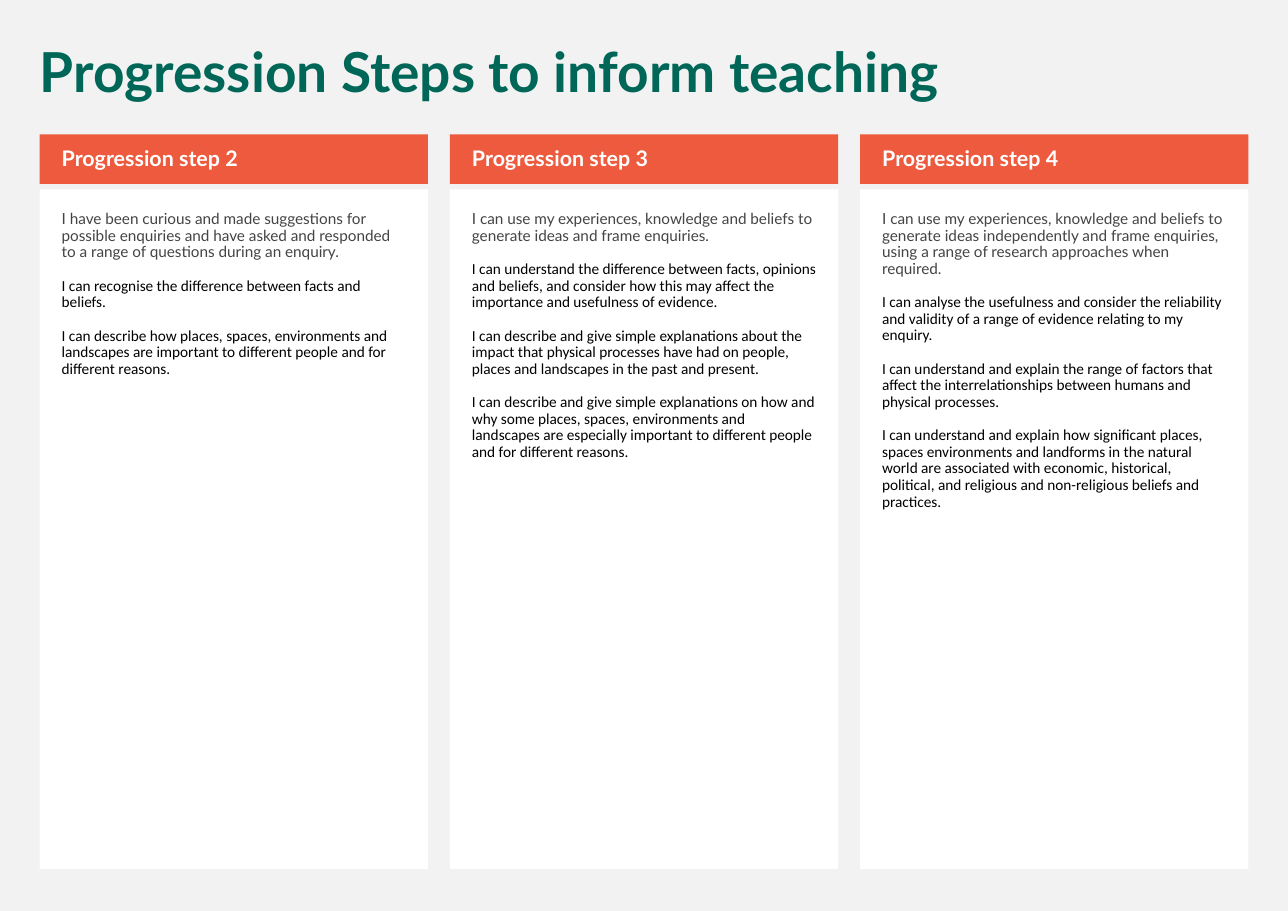
from pptx import Presentation
from pptx import util as u
from pptx.dml.color import RGBColor
from pptx.enum import shapes, text

GREY_BACKGROUND = RGBColor(0xF2, 0xF2, 0xF2)
GREEN = RGBColor(0x00, 0x67, 0x58)
ORANGE = RGBColor(0xED, 0x5A, 0x3E)
WHITE = RGBColor(0xFF, 0xFF, 0xFF)
DARK_GREY = RGBColor(0x44, 0x44, 0x44)
BLACK = RGBColor(0x00, 0x00, 0x00)

# Grid, in inches
SLIDE_WIDTH, SLIDE_HEIGHT = 11.69, 8.27
MARGIN = 0.36
GUTTER = 0.2
COLUMN_WIDTH = (SLIDE_WIDTH - 2 * MARGIN - 2 * GUTTER) / 3
HEADER_TOP, HEADER_HEIGHT = 1.22, 0.45
BODY_TOP = 1.72
BODY_HEIGHT = 6.17

TITLE_FONT = dict(name="Lato", size=u.Pt(36), bold=True)
HEADER_FONT = dict(name="Lato", size=u.Pt(14), bold=True)
LEAD_FONT = dict(name="Lato", size=u.Pt(10), bold=False)
BODY_FONT = dict(name="Calibri", size=u.Pt(10), bold=False)

STEPS = {
    "Progression step 2": [
        "I have been curious and made suggestions for possible enquiries and have asked "
        "and responded to a range of questions during an enquiry.",
        "I can recognise the difference between facts and beliefs.",
        "I can describe how places, spaces, environments and landscapes are important to "
        "different people and for different reasons.",
    ],
    "Progression step 3": [
        "I can use my experiences, knowledge and beliefs to generate ideas and frame "
        "enquiries.",
        "I can understand the difference between facts, opinions and beliefs, and consider "
        "how this may affect the importance and usefulness of evidence.",
        "I can describe and give simple explanations about the impact that physical "
        "processes have had on people, places and landscapes in the past and present.",
        "I can describe and give simple explanations on how and why some places, spaces, "
        "environments and landscapes are especially important to different people and for "
        "different reasons.",
    ],
    "Progression step 4": [
        "I can use my experiences, knowledge and beliefs to generate ideas independently "
        "and frame enquiries, using a range of research approaches when required.",
        "I can analyse the usefulness and consider the reliability and validity of a range "
        "of evidence relating to my enquiry.",
        "I can understand and explain the range of factors that affect the "
        "interrelationships between humans and physical processes.",
        "I can understand and explain how significant places, spaces environments and "
        "landforms in the natural world are associated with economic, historical, "
        "political, and religious and non-religious beliefs and practices.",
    ],
}


def write(shape, lines, insets, anchor):
    """Fill a shape with (wording, font values, colour) paragraphs."""
    frame = shape.text_frame
    frame.word_wrap = True
    frame.auto_size = text.MSO_AUTO_SIZE.NONE
    frame.vertical_anchor = anchor
    for side, inset in zip(("left", "top", "right", "bottom"), insets):
        setattr(frame, f"margin_{side}", u.Inches(inset))
    for index, (wording, font_values, colour) in enumerate(lines):
        paragraph = frame.add_paragraph() if index else frame.paragraphs[0]
        paragraph.alignment = text.PP_ALIGN.LEFT
        paragraph.line_spacing = 0.9
        paragraph.space_before = u.Pt(11)
        run = paragraph.add_run()
        run.text = wording
        for name, value in font_values.items():
            setattr(run.font, name, value)
        run.font.color.rgb = colour


def add_panel(slide, left, top, height, fill):
    shape = slide.shapes.add_shape(
        shapes.MSO_SHAPE.RECTANGLE,
        u.Inches(left), u.Inches(top), u.Inches(COLUMN_WIDTH), u.Inches(height))
    shape.shadow.inherit = False
    shape.fill.solid()
    shape.fill.fore_color.rgb = fill
    shape.line.fill.background()
    return shape


presentation = Presentation()
presentation.slide_width = u.Inches(SLIDE_WIDTH)
presentation.slide_height = u.Inches(SLIDE_HEIGHT)
slide = presentation.slides.add_slide(presentation.slide_layouts[5])
slide.background.fill.solid()
slide.background.fill.fore_color.rgb = GREY_BACKGROUND

title = slide.shapes.title
title_box = dict(left=0.26, top=0.36, width=11.08, height=0.65)
for name, value in title_box.items():
    setattr(title, name, u.Inches(value))
write(title, [("Progression Steps to inform teaching", TITLE_FONT, GREEN)],
      (0.1, 0.05, 0.1, 0.05), text.MSO_ANCHOR.TOP)

for column, (heading, statements) in enumerate(STEPS.items()):
    left = MARGIN + column * (COLUMN_WIDTH + GUTTER)
    lead, *others = statements

    body = add_panel(slide, left, BODY_TOP, BODY_HEIGHT, WHITE)
    lines = [(lead, LEAD_FONT, DARK_GREY)]
    lines += [(statement, BODY_FONT, BLACK) for statement in others]
    write(body, lines, (0.2, 0.2, 0.2, 0.2), text.MSO_ANCHOR.TOP)

    header = add_panel(slide, left, HEADER_TOP, HEADER_HEIGHT, ORANGE)
    write(header, [(heading, HEADER_FONT, WHITE)],
          (0.2, 0.05, 0.1, 0.05), text.MSO_ANCHOR.MIDDLE)

presentation.save("out.pptx")
